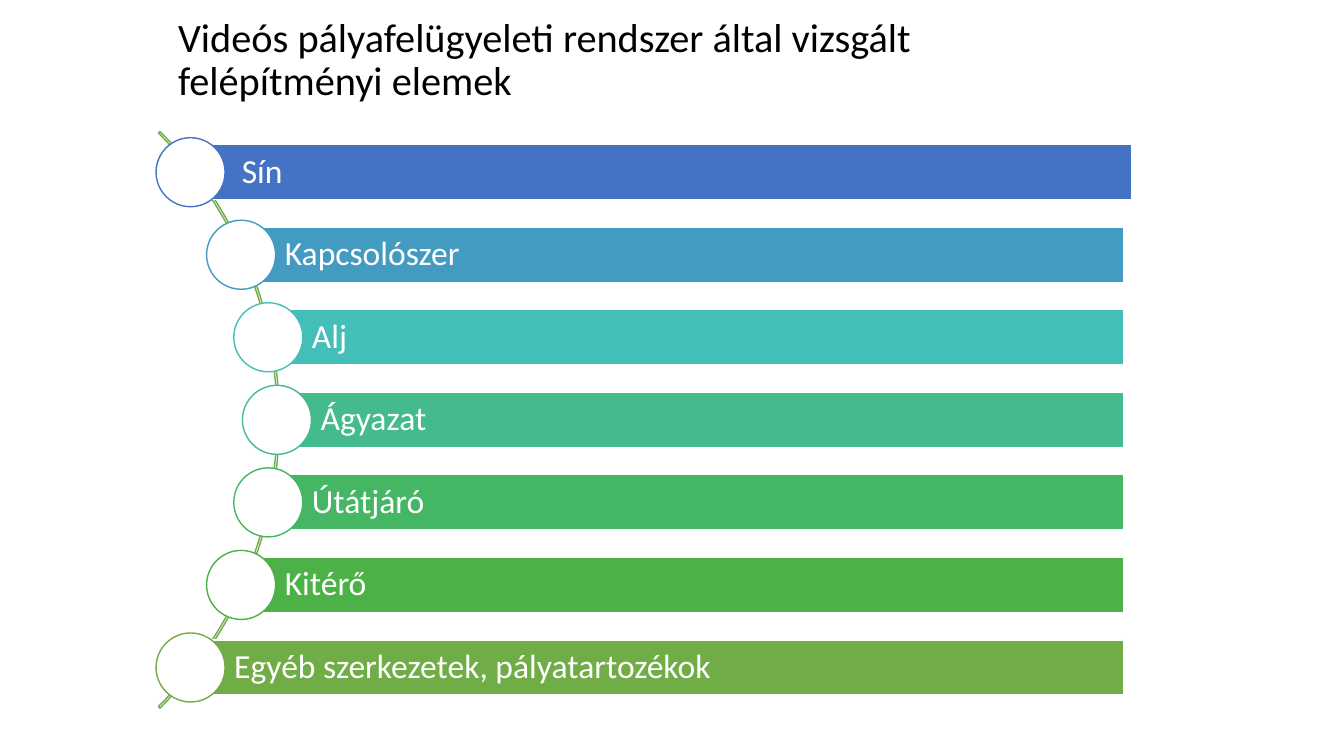
from dataclasses import dataclass
from math import sqrt

from pptx import Presentation
from pptx.dml.color import RGBColor
from pptx.enum import shapes, text
from pptx.util import Cm, Pt


@dataclass(frozen=True)
class Theme:
    font: str = "Calibri"
    title_size: float = 28.8
    label_size: float = 24
    line_width: float = 1
    ink: str = "000000"
    paper: str = "FFFFFF"
    arc: str = "70AD47"


THEME = Theme()

ELEMENTS = [
    ("Sín", "4472C4"),
    ("Kapcsolószer", "449BC1"),
    ("Alj", "43BEB9"),
    ("Ágyazat", "43BB8D"),
    ("Útátjáró", "45B664"),
    ("Kitérő", "4CB146"),
    ("Egyéb szerkezetek, pályatartozékok", "70AD47"),
]

# Lengths in centimetres
MIDDLE_Y = 10.58
ROW_PITCH = 2.08
CURVE_RADIUS = 10.03
CURVE_CENTRE_X = -3.05
ARC_LEFT, ARC_SIZE = -13.51, 20.55
BAR_RIGHT, BAR_HEIGHT = 28.33, 1.39
FIRST_BAR_SHIFT = 0.19
CIRCLE_SIZE = 1.74


def add_outlined(slide, kind, left, top, width, height, line, fill=None):
    shape = slide.shapes.add_shape(kind, Cm(left), Cm(top), Cm(width), Cm(height))
    shape.shadow.inherit = False
    shape.line.color.rgb = RGBColor.from_string(line)
    shape.line.width = Pt(THEME.line_width)
    if fill:
        shape.fill.solid()
        shape.fill.fore_color.rgb = RGBColor.from_string(fill)
    else:
        shape.fill.background()
    return shape


def write(shape, wording, size, color):
    frame = shape.text_frame
    frame.word_wrap = True
    frame.vertical_anchor = text.MSO_ANCHOR.MIDDLE
    paragraph = frame.paragraphs[0]
    paragraph.text = wording
    paragraph.alignment = text.PP_ALIGN.LEFT
    paragraph.line_spacing = 0.9
    paragraph.font.name = THEME.font
    paragraph.font.size = Pt(size)
    paragraph.font.color.rgb = RGBColor.from_string(color)
    return frame


def add_title(slide, wording):
    box = slide.shapes.add_textbox(Cm(4.24), Cm(0.33), Cm(24.31), Cm(2.41))
    write(box, wording, THEME.title_size, THEME.ink)


def add_arc(slide):
    arc = add_outlined(slide, shapes.MSO_SHAPE.BLOCK_ARC, ARC_LEFT,
                       MIDDLE_Y - ARC_SIZE / 2, ARC_SIZE, ARC_SIZE, THEME.arc)
    # Start and end angle (315° and 45°), then thickness
    for index, value in enumerate((189, 27, 0.0027)):
        arc.adjustments[index] = value


def add_bar(slide, left, centre_y, width, wording, color):
    bar = add_outlined(slide, shapes.MSO_SHAPE.RECTANGLE, left,
                       centre_y - BAR_HEIGHT / 2, width, BAR_HEIGHT,
                       THEME.paper, color)
    frame = write(bar, wording, THEME.label_size, THEME.paper)
    frame.margin_left = Cm(1.1)
    frame.margin_top = frame.margin_right = frame.margin_bottom = Cm(0.18)


def add_circle(slide, centre_x, centre_y, color):
    add_outlined(slide, shapes.MSO_SHAPE.OVAL, centre_x - CIRCLE_SIZE / 2,
                 centre_y - CIRCLE_SIZE / 2, CIRCLE_SIZE, CIRCLE_SIZE,
                 color, THEME.paper)


def add_element(slide, index, wording, color):
    """Adds a bar and its circle, whose centre lies on the curve."""
    offset = (index - (len(ELEMENTS) - 1) / 2) * ROW_PITCH
    centre_x = CURVE_CENTRE_X + sqrt(CURVE_RADIUS ** 2 - offset ** 2)
    centre_y = MIDDLE_Y + offset
    shift = FIRST_BAR_SHIFT if index == 0 else 0
    add_bar(slide, centre_x + shift, centre_y, BAR_RIGHT - centre_x, wording, color)
    add_circle(slide, centre_x, centre_y, color)


def main():
    presentation = Presentation()
    presentation.slide_width = Cm(33.87)
    presentation.slide_height = Cm(19.05)
    slide = presentation.slides.add_slide(presentation.slide_layouts[6])
    add_title(slide, "Videós pályafelügyeleti rendszer által vizsgált felépítményi elemek")
    add_arc(slide)
    for index, (wording, color) in enumerate(ELEMENTS):
        add_element(slide, index, wording, color)
    presentation.save("out.pptx")


if __name__ == "__main__":
    main()
